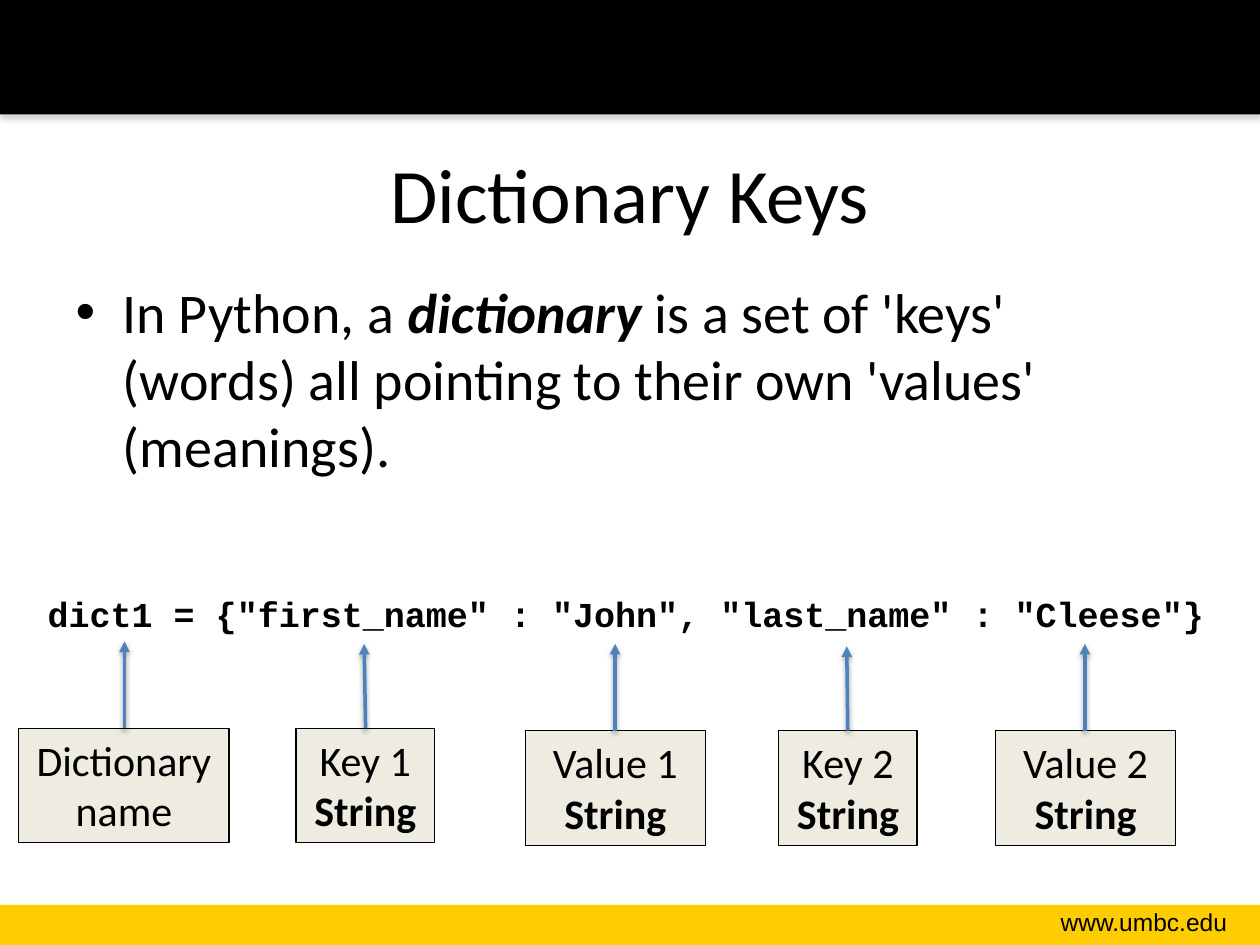
from lxml import etree
from pptx import Presentation
from pptx.dml.color import RGBColor
from pptx.enum.shapes import MSO_CONNECTOR as Connector, MSO_SHAPE as Shape
from pptx.enum.text import MSO_ANCHOR as Anchor, MSO_AUTO_SIZE as AutoSize, PP_ALIGN as Align
from pptx.oxml.ns import qn
from pptx.util import Cm, Pt

BLACK = RGBColor(0x00, 0x00, 0x00)
GRAY = RGBColor(0x80, 0x80, 0x80)
GOLD = RGBColor(0xFF, 0xCC, 0x00)
CREAM = RGBColor(0xEE, 0xEC, 0xE1)
BLUE = RGBColor(0x4F, 0x81, 0xBD)

SLIDE_WIDTH = 25.4
SLIDE_HEIGHT = 19.05
LABEL_HEIGHT = 2.31

LABELS = [
    (0.38, 14.68, 4.24, ["Dictionary name"], 2.51, 2.51, 12.93),
    (5.97, 14.68, 2.79, ["Key 1", "String"], 7.37, 7.34, 12.98),
    (10.59, 14.73, 3.63, ["Value 1", "String"], 12.4, 12.4, 12.98),
    (15.7, 14.73, 2.79, ["Key 2", "String"], 17.09, 17.07, 13.03),
    (20.07, 14.73, 3.63, ["Value 2", "String"], 21.87, 21.87, 12.98),
]


def add_span(para, text, size, font="Calibri", bold=False, italic=False):
    span = para.add_run()
    span.text = text
    span.font.name = font
    span.font.size = Pt(size)
    span.font.bold = bold
    span.font.italic = italic
    span.font.color.rgb = BLACK


def add_shadow(item, color, opacity, distance):
    properties = item.element.spPr
    for old in properties.findall(qn("a:effectLst")):
        properties.remove(old)
    effects = etree.SubElement(properties, qn("a:effectLst"))
    shadow = etree.SubElement(
        effects, qn("a:outerShdw"), blurRad=str(Pt(3.1)), dist=str(Pt(distance)),
        dir="5400000", rotWithShape="0")
    tint = etree.SubElement(shadow, qn("a:srgbClr"), val=str(color))
    etree.SubElement(tint, qn("a:alpha"), val=str(opacity * 1000))


def add_rectangle(page, left, top, width, height, fill):
    box = page.shapes.add_shape(Shape.RECTANGLE, Cm(left), Cm(top), Cm(width), Cm(height))
    box.shadow.inherit = False
    box.fill.solid()
    box.fill.fore_color.rgb = fill
    box.line.fill.background()
    return box


def add_text(page, left, top, width, height, text, size, font, bold=False, align=Align.LEFT):
    box = page.shapes.add_textbox(Cm(left), Cm(top), Cm(width), Cm(height))
    box.text_frame.word_wrap = True
    box.text_frame.auto_size = AutoSize.SHAPE_TO_FIT_TEXT
    para = box.text_frame.paragraphs[0]
    para.alignment = align
    add_span(para, text, size, font, bold)


def add_label(page, left, top, width, lines):
    box = add_rectangle(page, left, top, width, LABEL_HEIGHT, CREAM)
    box.line.color.rgb = BLACK
    box.line.width = Pt(0.75)
    frame = box.text_frame
    frame.word_wrap = True
    frame.auto_size = AutoSize.SHAPE_TO_FIT_TEXT
    frame.vertical_anchor = Anchor.TOP
    for index, text in enumerate(lines):
        para = frame.add_paragraph() if index else frame.paragraphs[0]
        para.alignment = Align.CENTER
        add_span(para, text, 24, bold=index > 0)


def add_arrow(page, start_x, start_y, end_x, end_y):
    arrow = page.shapes.add_connector(
        Connector.STRAIGHT, Cm(start_x), Cm(start_y), Cm(end_x), Cm(end_y))
    arrow.line.color.rgb = BLUE
    arrow.line.width = Pt(2)
    etree.SubElement(arrow.line._get_or_add_ln(), qn("a:tailEnd"), type="triangle")
    add_shadow(arrow, BLACK, 38, 1.6)


def place(holder, left, top, width, height):
    holder.left, holder.top = Cm(left), Cm(top)
    holder.width, holder.height = Cm(width), Cm(height)
    return holder.text_frame


def fill_placeholders(page):
    title = place(page.shapes.title, 1.27, 2.29, 22.86, 3.18)
    title.vertical_anchor = Anchor.MIDDLE
    title.paragraphs[0].alignment = Align.CENTER
    add_span(title.paragraphs[0], "Dictionary Keys", 44)

    body = place(page.placeholders[1], 1.27, 5.46, 22.86, 4.7)
    para = body.paragraphs[0]
    para.space_before = Pt(0)
    add_span(para, "In Python, a ", 32)
    add_span(para, "dictionary", 32, bold=True, italic=True)
    add_span(para, " is a set of 'keys' (words) all pointing to their own 'values' (meanings).", 32)


def main():
    deck = Presentation()
    deck.slide_width, deck.slide_height = Cm(SLIDE_WIDTH), Cm(SLIDE_HEIGHT)
    page = deck.slides.add_slide(deck.slide_layouts[1])

    add_rectangle(page, 0, 18.24, SLIDE_WIDTH, 0.81, GOLD)
    header = add_rectangle(page, 0, 0, SLIDE_WIDTH, 2.31, BLACK)
    add_shadow(header, GRAY, 35, 1.8)
    add_text(page, 19.94, 18.16, 5.05, 0.86, "www.umbc.edu", 14, "Arial", align=Align.RIGHT)

    fill_placeholders(page)
    add_text(page, 0.71, 11.81, 24.1, 1.12,
             'dict1 = {"first_name" : "John", "last_name" : "Cleese"}',
             20, "Courier New", bold=True)

    for left, top, width, lines, start_x, end_x, end_y in LABELS:
        add_label(page, left, top, width, lines)
        add_arrow(page, start_x, top, end_x, end_y)

    deck.save("out.pptx")


if __name__ == "__main__":
    main()
